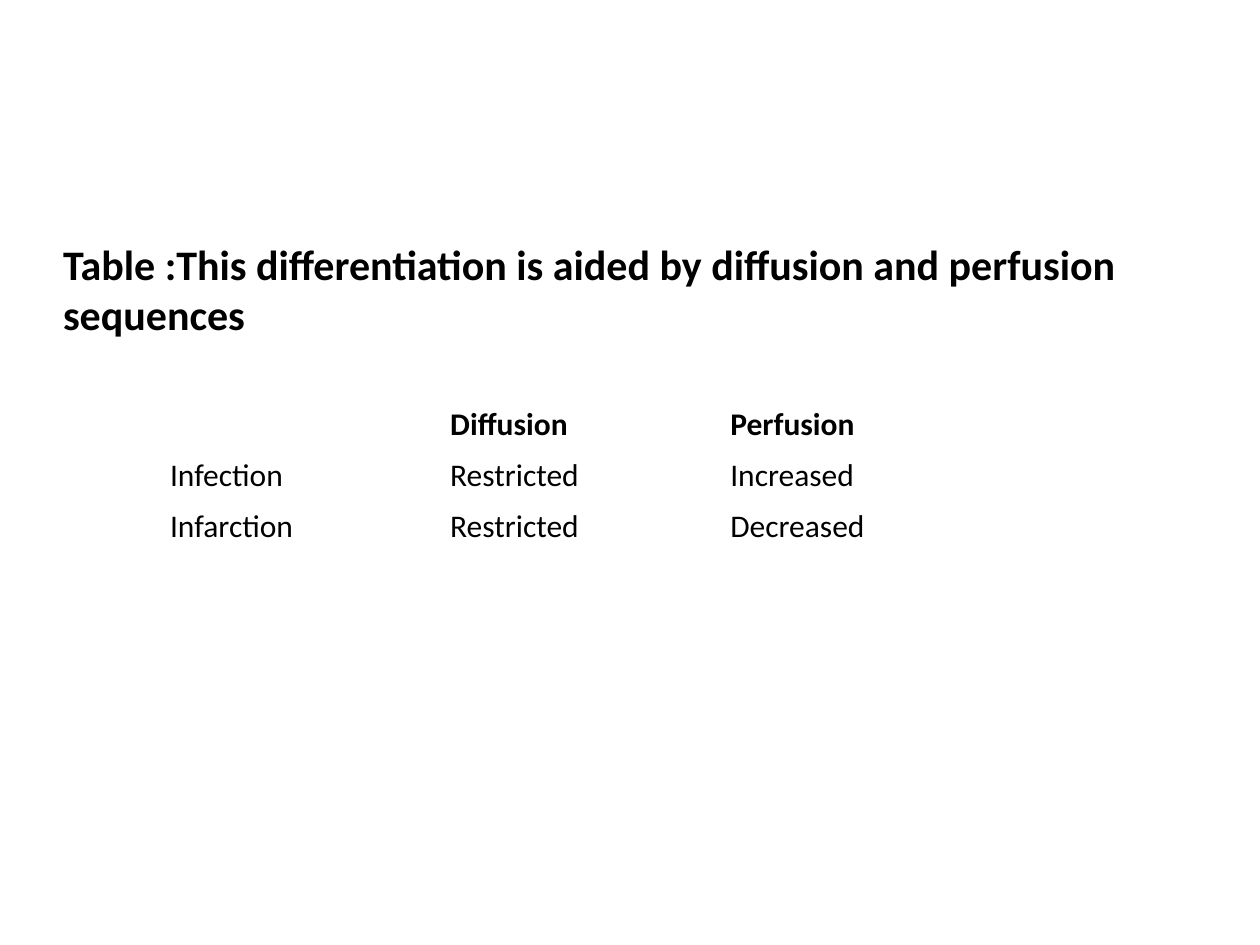
import pptx
import pptx.util
import pptx.dml.color
import pptx.enum.text

Inches = pptx.util.Inches
BLACK = pptx.dml.color.RGBColor(0, 0, 0)
FONT = "Calibri"


def add_text(para, text, size, bold):
    para.alignment = pptx.enum.text.PP_ALIGN.LEFT
    span = para.add_run()
    span.text = text
    span.font.name = FONT
    span.font.size = pptx.util.Pt(size)
    span.font.bold = bold
    span.font.color.rgb = BLACK


deck = pptx.Presentation()
deck.slide_width = Inches(10)
deck.slide_height = Inches(7.5)
page = deck.slides.add_slide(deck.slide_layouts[5])

title = page.shapes.title
title.left, title.top = Inches(0.5), Inches(1.67)
title.width, title.height = Inches(8.42), Inches(1.45)
frame = title.text_frame
frame.word_wrap = True
frame.auto_size = pptx.enum.text.MSO_AUTO_SIZE.NONE
frame.vertical_anchor = pptx.enum.text.MSO_ANCHOR.TOP
frame.margin_left = frame.margin_right = 0
frame.margin_top, frame.margin_bottom = Inches(0.22), Inches(0.11)
add_text(
    frame.paragraphs[0],
    "Table :This differentiation is aided by diffusion and perfusion sequences",
    24,
    True,
)

findings = [
    ["", "Diffusion", "Perfusion"],
    ["Infection", "Restricted", "Increased"],
    ["Infarction", "Restricted", "Decreased"],
]
table = page.shapes.add_table(
    len(findings), len(findings[0]),
    Inches(1.25), Inches(3.17), Inches(6.67), Inches(1.2),
).table
table.first_row = False
table.horz_banding = False

for row_index, row in enumerate(findings):
    for column_index, text in enumerate(row):
        cell = table.cell(row_index, column_index)
        cell.fill.background()
        para = cell.text_frame.paragraphs[0]
        if text:
            add_text(para, text, 18, row_index == 0)

deck.save("out.pptx")
